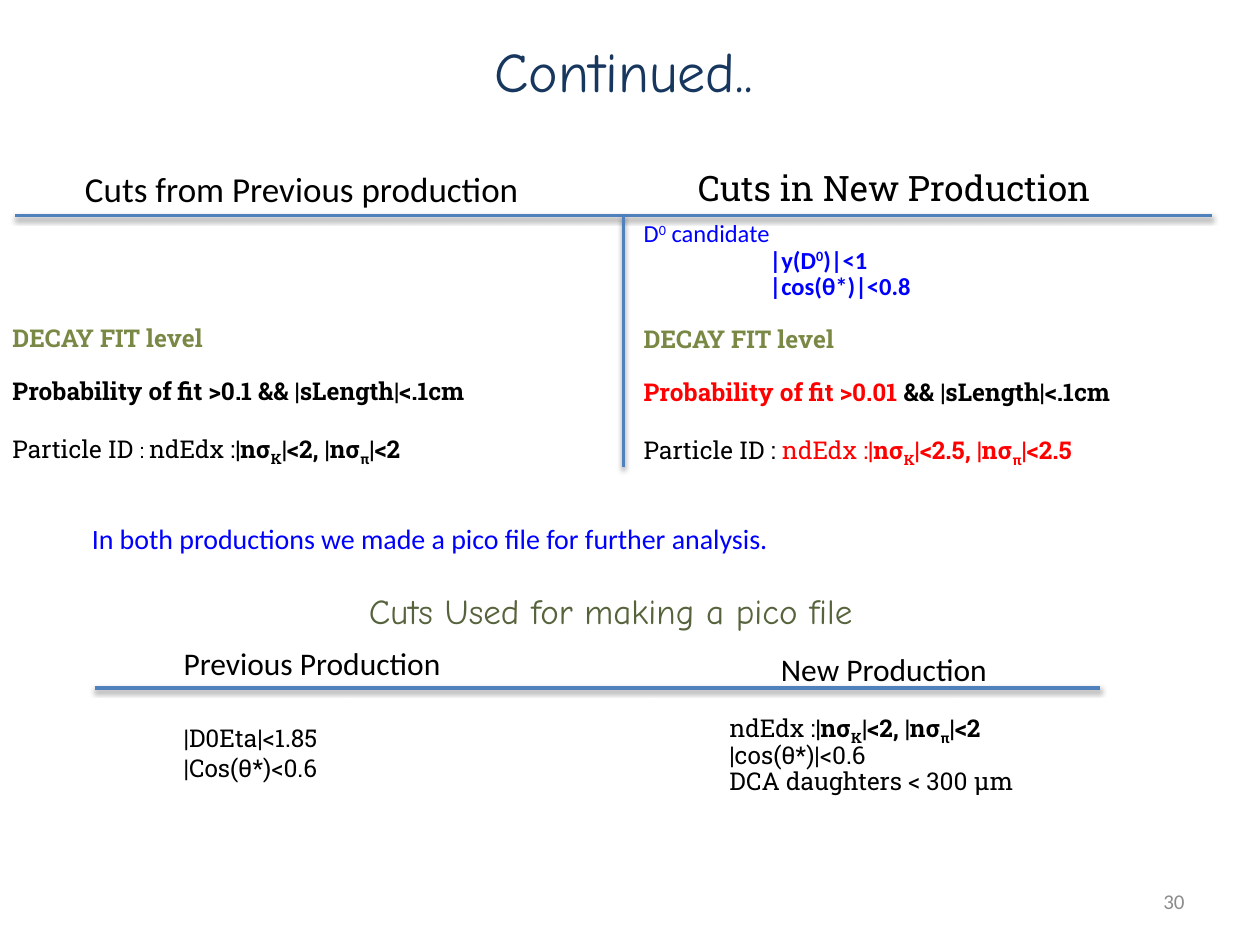
"""Build the slide comparing cuts of the previous and the new production."""
import lxml.etree
import pptx
import pptx.dml.color
import pptx.enum.shapes
import pptx.enum.text
import pptx.oxml.ns
import pptx.util

WIDTH, HEIGHT = 10, 7.5
COLUMNS, ROWS = 100, 75
BLACK, BLUE, RED, OLIVE, RULE = "000000", "0000FF", "FF0000", "798844", "4F81BD"
SANS, HAND, SLAB = "Calibri", "Comic Neue", "Roboto Slab"
BOLD = {"bold": True}
RAISED = {"bold": True, "baseline": 30}
LOWERED = {"bold": True, "baseline": -25}
TIGHT = {"line_spacing": 0.9}
GAP = {"line_spacing": 0.9, "space_before": pptx.util.Pt(15)}
WIDE_GAP = {"line_spacing": 0.9, "space_before": pptx.util.Pt(16.5)}
MIDDLE = pptx.enum.text.MSO_ANCHOR.MIDDLE
CENTER = {"alignment": pptx.enum.text.PP_ALIGN.CENTER}
RIGHT = {"alignment": pptx.enum.text.PP_ALIGN.RIGHT}


def sigma_cut(limit, color=BLACK):
    """Return the runs of the energy loss cut on kaons and pions."""
    pieces = [("ndEdx :", {}), ("|nσ", BOLD), ("K", LOWERED), (f"|<{limit}, |nσ", BOLD),
              ("π", LOWERED), (f"|<{limit}", BOLD)]
    return [(text, {**style, "color": color}) for text, style in pieces]


def line(text, layout=None, **style):
    """Return a paragraph of one run."""
    return [(text, style)], layout or {}


DECAY = {"bold": True, "color": OLIVE}
CANDIDATE = {"name": SANS, "color": BLUE}
INDENTED = {**TIGHT, "margin": 1}
PICO = {**TIGHT, "margin": 0.5}

TEXTS = [
    ((1.2, 10.5, 45.5, 9), SANS, 20, BLACK, MIDDLE, [line("Cuts from Previous production", CENTER)]),
    ((7.5, 2.4, 84, 6.4), HAND, 32, "17375E", None, [line("Continued..", CENTER)]),
    ((54.4, 12.7, 39.1, 4.4), SLAB, 20, BLACK, None, [line("Cuts in New Production")]),
    ((0, 25.4, 49.5, 13.8), SLAB, 14, BLACK, None, [
        line("DECAY FIT level", TIGHT, **DECAY),
        line("Probability of fit >0.1 && |sLength|<.1cm", GAP, **BOLD),
        ([("Particle ID ", {}), (": ", {"size": pptx.util.Pt(12)}), *sigma_cut("2")], WIDE_GAP),
    ]),
    ((50.1, 17.1, 49.9, 20.1), SLAB, 14, BLACK, None, [
        ([("D", CANDIDATE), ("0", {**CANDIDATE, "baseline": 30}), (" candidate", CANDIDATE)], TIGHT),
        ([("|y(D", {**CANDIDATE, **BOLD}), ("0", {**CANDIDATE, **RAISED}),
          (")|<1", {**CANDIDATE, **BOLD})], INDENTED),
        line("|cos(θ*)|<0.8", INDENTED, **CANDIDATE, **BOLD),
        line("DECAY FIT level", GAP, **DECAY),
        ([("Probability of fit >0.01", {**BOLD, "color": RED}), (" && |sLength|<.1cm", BOLD)], GAP),
        ([("Particle ID : ", {}), *sigma_cut("2.5", RED)], WIDE_GAP),
    ]),
    ((51.9, 56.1, 44.3, 7.4), SLAB, 14, BLACK, None, [
        (sigma_cut("2"), PICO),
        line("|cos(θ*)|<0.6", PICO),
        line("DCA daughters < 300 µm", PICO),
    ]),
    ((6.3, 40.9, 85.2, 3.7), SANS, 16, BLUE, None,
     [line("In both productions we made a pico file for further analysis.")]),
    ((28.3, 46.3, 43.3, 4.4), HAND, 20, "56633C", None, [line("Cuts Used for making a pico file")]),
    ((13.6, 50.6, 24.4, 4), SANS, 18, BLACK, None, [line("Previous Production")]),
    ((61, 51.1, 24.3, 4), SANS, 18, BLACK, None, [line("New Production")]),
    ((13.6, 56.9, 21.5, 5.7), SLAB, 14, BLACK, None, [line("|D0Eta|<1.85"), line("|Cos(θ*)<0.6")]),
    ((71.7, 69.5, 23.3, 4), SANS, 12, "8C8C8C", MIDDLE, [line("30", RIGHT)]),
]
RULES = [(1.2, 17.1, 96.2, 17.1), (49.5, 17.1, 49.5, 37.1), (7.5, 54.6, 87.3, 54.6)]


def across(columns):
    """Turn grid columns into a length."""
    return pptx.util.Inches(columns * WIDTH / COLUMNS)


def down(rows):
    """Turn grid rows into a length."""
    return pptx.util.Inches(rows * HEIGHT / ROWS)


def rgb(color):
    """Turn a hex string into a colour."""
    return pptx.dml.color.RGBColor.from_string(color)


def add_run(paragraph, text, style):
    """Add a run with its font values."""
    run = paragraph.add_run()
    run.text = text
    for name, value in style.items():
        if name == "color":
            run.font.color.rgb = rgb(value)
        elif name == "baseline":
            run._r.get_or_add_rPr().set("baseline", str(value * 1000))
        else:
            setattr(run.font, name, value)


def add_text(slide, place, font, size, color, anchor, paragraphs):
    """Add a text box with its paragraphs."""
    left, top, width, height = place
    shape = slide.shapes.add_textbox(across(left), down(top), across(width), down(height))
    frame = shape.text_frame
    frame.word_wrap = True
    frame.vertical_anchor = anchor
    base = {"name": font, "size": pptx.util.Pt(size), "color": color}
    for index, (runs, layout) in enumerate(paragraphs):
        paragraph = frame.add_paragraph() if index else frame.paragraphs[0]
        for name, value in layout.items():
            if name == "margin":
                paragraph._p.get_or_add_pPr().set("marL", str(pptx.util.Inches(value)))
            else:
                setattr(paragraph, name, value)
        for text, style in runs:
            add_run(paragraph, text, {**base, **style})


def add_rule(slide, left, top, right, bottom):
    """Add a straight line with a soft shadow below it."""
    connector = slide.shapes.add_connector(
        pptx.enum.shapes.MSO_CONNECTOR.STRAIGHT, across(left), down(top), across(right), down(bottom))
    connector.line.color.rgb = rgb(RULE)
    connector.line.width = pptx.util.Pt(2)
    tag = pptx.oxml.ns.qn
    effects = lxml.etree.SubElement(connector._element.spPr, tag("a:effectLst"))
    shadow = lxml.etree.SubElement(
        effects, tag("a:outerShdw"), blurRad=str(pptx.util.Pt(3.1)), dist=str(pptx.util.Pt(1.6)),
        dir="5400000", rotWithShape="0")
    tint = lxml.etree.SubElement(shadow, tag("a:srgbClr"), val=BLACK)
    lxml.etree.SubElement(tint, tag("a:alpha"), val="38000")


def main():
    """Build and save the presentation."""
    presentation = pptx.Presentation()
    presentation.slide_width = pptx.util.Inches(WIDTH)
    presentation.slide_height = pptx.util.Inches(HEIGHT)
    slide = presentation.slides.add_slide(presentation.slide_layouts[6])
    for rule in RULES:
        add_rule(slide, *rule)
    for text in TEXTS:
        add_text(slide, *text)
    presentation.save("out.pptx")


if __name__ == "__main__":
    main()
